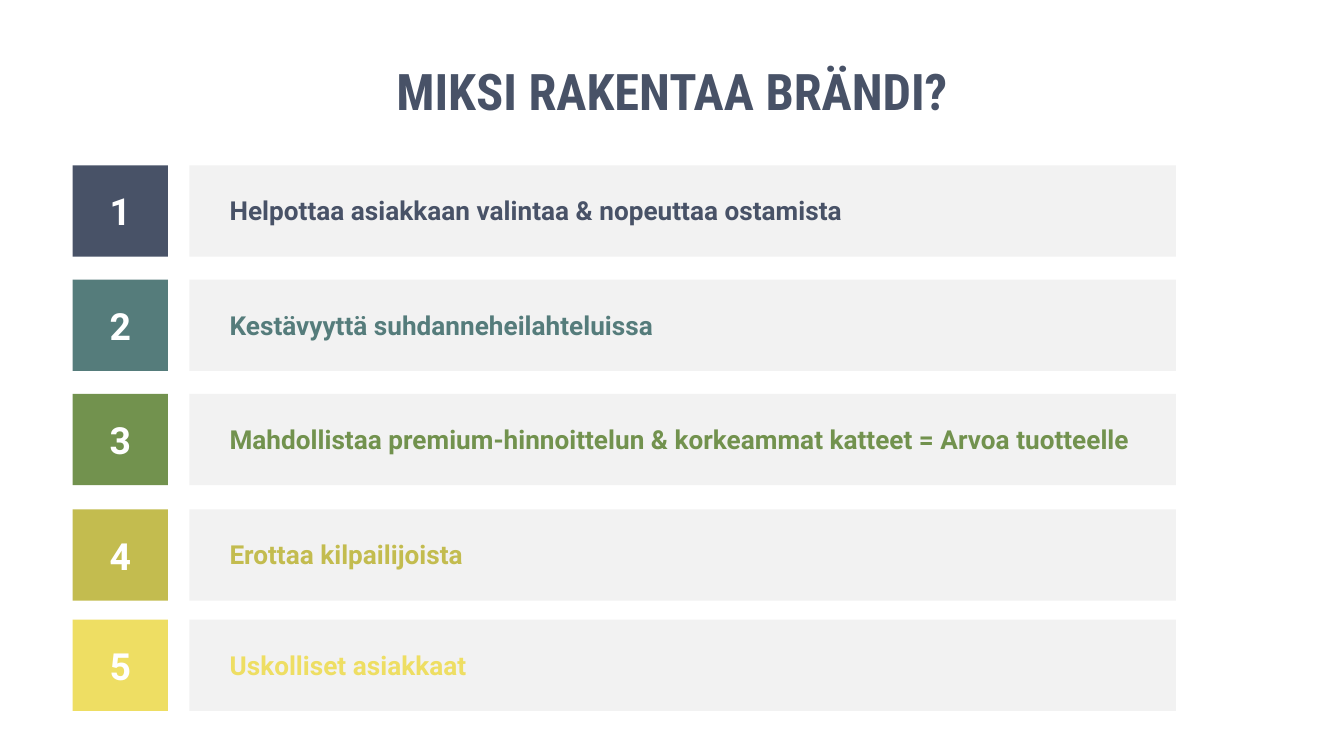
from dataclasses import dataclass

from pptx import Presentation
from pptx.dml.color import RGBColor
from pptx.enum.shapes import MSO_SHAPE
from pptx.enum.text import MSO_ANCHOR, MSO_AUTO_SIZE, PP_ALIGN
from pptx.util import Inches, Pt

# Content: reason, colour, row top, label width
TITLE = "MIKSI RAKENTAA BRÄNDI?"
REASONS = [
    ("Helpottaa asiakkaan valintaa & nopeuttaa ostamista", "485267", 1.23, 4.81),
    ("Kestävyyttä suhdanneheilahteluissa", "557C7B", 2.08, 3.39),
    ("Mahdollistaa premium-hinnoittelun & korkeammat katteet = Arvoa tuotteelle",
     "72924E", 2.93, 7.14),
    ("Erottaa kilpailijoista", "C3BC4F", 3.79, 1.96),
    ("Uskolliset asiakkaat", "EEDE63", 4.61, 1.98),
]


@dataclass(frozen=True)
class Theme:
    title_font: str = "Roboto Condensed"
    body_font: str = "Roboto"
    title_size: int = 27
    number_size: int = 20
    label_size: int = 14
    title_color: str = "485267"
    number_color: str = "FFFFFF"
    bar_color: str = "F2F2F2"


THEME = Theme()

# Layout in inches
NUMBER_LEFT, NUMBER_WIDTH = 0.54, 0.71
BAR_LEFT, BAR_WIDTH = 1.41, 7.34
ROW_HEIGHT = 0.68
LABEL_LEFT, LABEL_HEIGHT = 1.61, 0.34


def write(shape, text, font, size, color, align, anchor):
    frame = shape.text_frame
    frame.word_wrap = True
    frame.auto_size = MSO_AUTO_SIZE.NONE
    frame.vertical_anchor = anchor
    para = frame.paragraphs[0]
    para.text = text
    para.alignment = align
    para.font.name = font
    para.font.size = Pt(size)
    para.font.bold = True
    para.font.color.rgb = RGBColor.from_string(color)


def add_block(page, left, top, width, color):
    block = page.shapes.add_shape(
        MSO_SHAPE.RECTANGLE, Inches(left), Inches(top), Inches(width), Inches(ROW_HEIGHT))
    block.shadow.inherit = False
    block.fill.solid()
    block.fill.fore_color.rgb = RGBColor.from_string(color)
    block.line.fill.background()
    return block


def add_reason(page, number, text, color, top, label_width):
    add_block(page, BAR_LEFT, top, BAR_WIDTH, THEME.bar_color)

    label_top = top + (ROW_HEIGHT - LABEL_HEIGHT) / 2
    label = page.shapes.add_textbox(
        Inches(LABEL_LEFT), Inches(label_top), Inches(label_width), Inches(LABEL_HEIGHT))
    label.text_frame.margin_right = 0
    write(label, text, THEME.body_font, THEME.label_size, color,
          PP_ALIGN.LEFT, MSO_ANCHOR.TOP)

    tile = add_block(page, NUMBER_LEFT, top, NUMBER_WIDTH, color)
    write(tile, str(number), THEME.body_font, THEME.number_size, THEME.number_color,
          PP_ALIGN.CENTER, MSO_ANCHOR.MIDDLE)


def main():
    # Widescreen 16:9 page
    deck = Presentation()
    deck.slide_width = Inches(10)
    deck.slide_height = deck.slide_width * 9 // 16
    page = deck.slides.add_slide(deck.slide_layouts[5])

    # Title
    title = page.shapes.title
    title.left, title.top = Inches(0.5), Inches(0.4)
    title.width, title.height = Inches(9), Inches(0.56)
    write(title, TITLE, THEME.title_font, THEME.title_size, THEME.title_color,
          PP_ALIGN.CENTER, MSO_ANCHOR.TOP)

    # Numbered reasons
    for number, reason in enumerate(REASONS, start=1):
        add_reason(page, number, *reason)

    deck.save("out.pptx")


if __name__ == "__main__":
    main()
